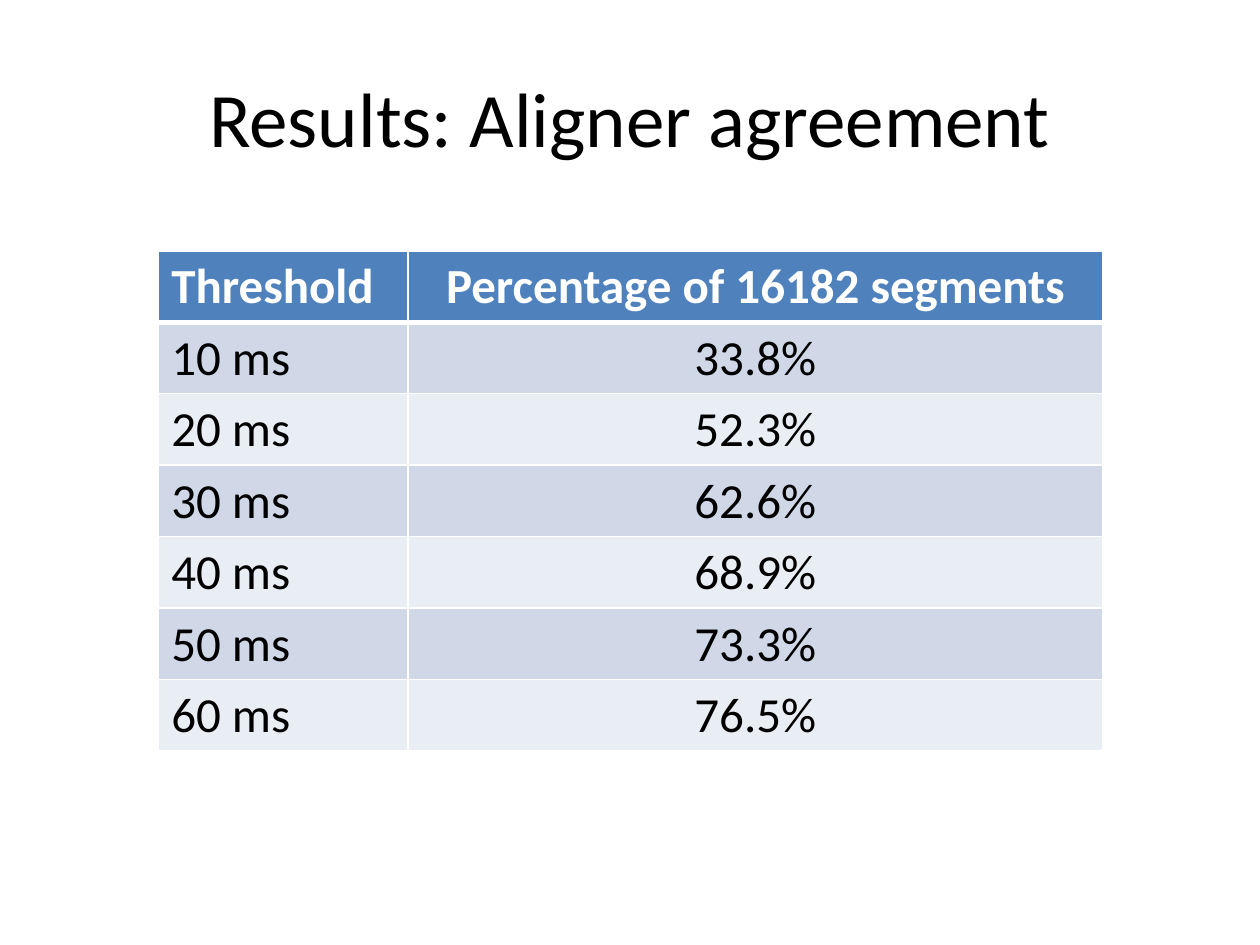
from lxml import etree
from pptx import Presentation
from pptx.dml.color import RGBColor
from pptx.enum.text import MSO_ANCHOR, PP_ALIGN
from pptx.oxml.ns import qn
from pptx.util import Inches, Pt

LEFT, CENTER = PP_ALIGN.LEFT, PP_ALIGN.CENTER
MIDDLE = MSO_ANCHOR.MIDDLE
FONT = "Calibri"
BLACK, WHITE, BLUE = "000000", "FFFFFF", "4F81BD"
BANDS = ("D0D8E8", "E9EDF4")
ROWS = [
    ("Threshold", "Percentage of 16182 segments"),
    ("10 ms", "33.8%"),
    ("20 ms", "52.3%"),
    ("30 ms", "62.6%"),
    ("40 ms", "68.9%"),
    ("50 ms", "73.3%"),
    ("60 ms", "76.5%"),
]


def rgb(color):
    return RGBColor.from_string(color)


def write(frame, text, size, color, align, bold=False):
    para = frame.paragraphs[0]
    para.alignment = align
    run = para.add_run()
    run.text = text
    font = run.font
    font.name, font.size, font.bold = FONT, Pt(size), bold
    font.color.rgb = rgb(color)


def edge(cell, widths):
    """Draw white cell borders; widths maps L, R, T, B to points."""
    props = cell._tc.get_or_add_tcPr()
    for spot, side in enumerate("LRTB"):
        line = etree.Element(qn(f"a:ln{side}"), w=str(Pt(widths[side])))
        fill = etree.SubElement(line, qn("a:solidFill"))
        etree.SubElement(fill, qn("a:srgbClr"), val=WHITE)
        props.insert(spot, line)


def add_title(slide, left, top, width, height):
    box = slide.shapes.add_textbox(left, top, width, height)
    frame = box.text_frame
    frame.word_wrap = True
    frame.vertical_anchor = MIDDLE
    write(frame, "Results: Aligner agreement", 44, BLACK, CENTER)


def add_results(slide, left, top, width, height):
    shape = slide.shapes.add_table(len(ROWS), 2, left, top, width, height)
    table = shape.table
    first = Inches(1.98)
    table.columns[0].width = first
    table.columns[1].width = width - first
    for r, row in enumerate(ROWS):
        head = r == 0
        fill = BLUE if head else BANDS[(r - 1) % 2]
        ink = WHITE if head else BLACK
        widths = {"L": 1, "R": 1, "T": 3 if r == 1 else 1, "B": 3 if head else 1}
        for c, text in enumerate(row):
            cell = table.cell(r, c)
            cell.fill.solid()
            cell.fill.fore_color.rgb = rgb(fill)
            edge(cell, widths)
            write(cell.text_frame, text, 28, ink, CENTER if c else LEFT, head)


def main():
    deck = Presentation()
    deck.slide_width, deck.slide_height = Inches(10), Inches(7.5)
    slide = deck.slides.add_slide(deck.slide_layouts[6])
    add_title(slide, Inches(0.5), Inches(0.3), Inches(9), Inches(1.25))
    add_results(slide, Inches(1.26), Inches(1.99), Inches(7.49), Inches(3.97))
    deck.save("out.pptx")


if __name__ == "__main__":
    main()
